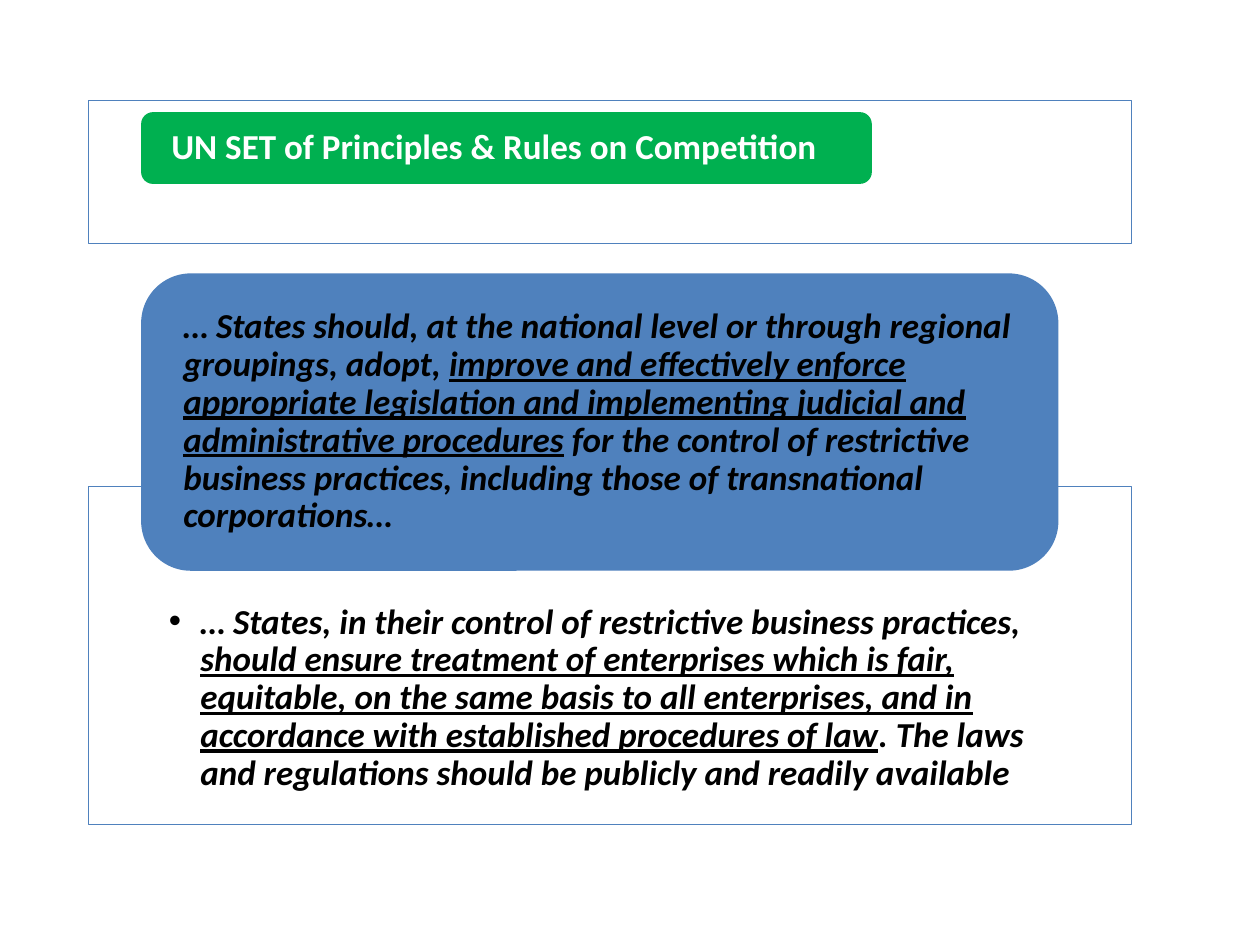
import pptx
import pptx.dml.color
import pptx.enum.shapes
import pptx.enum.text
import pptx.oxml.ns
import pptx.util
import lxml.etree

COLORS = {"white": "FFFFFF", "black": "000000", "green": "00B050", "blue": "4F81BD"}
WIDTH, HEIGHT = pptx.util.Inches(10), pptx.util.Inches(7.5)
FRAME_LEFT, FRAME_WIDTH = 7, 82.8
CARD_LEFT = 11.2
SHAPES = pptx.enum.shapes.MSO_SHAPE
ANCHORS = pptx.enum.text.MSO_ANCHOR

TITLE = [("UN SET of Principles & Rules on Competition", False)]
STATES_DUTY = [
    ("… States should, at the national level or through regional groupings, adopt, ", False),
    ("improve and effectively enforce appropriate legislation and implementing "
     "judicial and administrative procedures", True),
    (" for the control of restrictive business practices, including those of "
     "transnational corporations…", False),
]
FAIR_TREATMENT = [
    ("… States, in their control of restrictive business practices, ", False),
    ("should ensure treatment of enterprises which is fair, equitable, on the same basis "
     "to all enterprises, and in accordance with established procedures of law", True),
    (". The laws and regulations should be publicly and readily available", False),
]


def color(name):
    """Return the named palette colour."""
    return pptx.dml.color.RGBColor.from_string(COLORS[name])


def place(left, top, width, height):
    """Turn percentages of the slide's size into lengths."""
    return [round(share * size / 100) for share, size in
            zip((left, top, width, height), (WIDTH, HEIGHT, WIDTH, HEIGHT))]


def move(shape, box):
    """Put a shape at a box and bring it to the front."""
    shape.left, shape.top, shape.width, shape.height = box
    shape.element.getparent().append(shape.element)


def style_frame(shape):
    """Give a shape the translucent white fill and thin blue outline of a frame."""
    shape.fill.solid()
    shape.fill.fore_color.rgb = color("white")
    solid = shape.element.spPr.find(pptx.oxml.ns.qn("a:solidFill"))
    lxml.etree.SubElement(solid[0], pptx.oxml.ns.qn("a:alpha"), val="90000")
    shape.line.color.rgb = color("blue")
    shape.line.width = pptx.util.Pt(0.75)


def add_box(slide, kind, box):
    """Add a preset shape without a shadow."""
    shape = slide.shapes.add_shape(kind, *box)
    shape.shadow.inherit = False
    return shape


def add_card(slide, box, fill):
    """Add a filled rounded card without an outline."""
    card = add_box(slide, SHAPES.ROUNDED_RECTANGLE, box)
    card.fill.solid()
    card.fill.fore_color.rgb = color(fill)
    card.line.fill.background()
    return card


def set_bullet(paragraph):
    """Give a paragraph a round bullet with a quarter-inch hanging indent."""
    properties = paragraph._p.get_or_add_pPr()
    indent = pptx.util.Inches(0.25)
    properties.set("marL", str(indent))
    properties.set("indent", str(-indent))
    lxml.etree.SubElement(properties, pptx.oxml.ns.qn("a:buChar"), char="•")


def write(shape, runs, text_color, insets, anchor, italic=True, bullet=False):
    """Write one bold paragraph whose marked runs are underlined."""
    frame = shape.text_frame
    frame.word_wrap = True
    frame.auto_size = pptx.enum.text.MSO_AUTO_SIZE.NONE
    frame.vertical_anchor = anchor
    side, top, bottom = map(pptx.util.Inches, insets)
    frame.margin_left = frame.margin_right = side
    frame.margin_top, frame.margin_bottom = top, bottom
    paragraph = frame.paragraphs[0]
    paragraph.alignment = pptx.enum.text.PP_ALIGN.LEFT
    paragraph.line_spacing = 0.9
    paragraph.space_before = pptx.util.Pt(0)
    if bullet:
        set_bullet(paragraph)
    font = paragraph.font
    font.name, font.size = "Calibri", pptx.util.Pt(20)
    font.bold, font.italic = True, italic
    font.color.rgb = color(text_color)
    for text, underlined in runs:
        run = paragraph.add_run()
        run.text = text
        if underlined:
            run.font.underline = True


def main():
    """Build the slide and save it."""
    presentation = pptx.Presentation()
    presentation.slide_width, presentation.slide_height = WIDTH, HEIGHT
    slide = presentation.slides.add_slide(presentation.slide_layouts[1])
    title, body = slide.shapes.title, slide.placeholders[1]

    style_frame(add_box(slide, SHAPES.RECTANGLE, place(FRAME_LEFT, 10.67, FRAME_WIDTH, 15.07)))
    add_card(slide, place(CARD_LEFT, 11.87, 58, 7.6), "green")
    move(title, place(11.4, 12.27, 57.4, 6.8))
    write(title, TITLE, "white", (0.22, 0, 0), ANCHORS.MIDDLE, italic=False)

    move(body, place(FRAME_LEFT, 51.5, FRAME_WIDTH, 35.73))
    style_frame(body)
    write(body, FAIR_TREATMENT, "black", (0.64, 0.93, 0.16), ANCHORS.TOP, bullet=True)

    card = add_card(slide, place(CARD_LEFT, 28.93, 72.8, 31.47), "blue")
    write(card, STATES_DUTY, "black", (0.22, 0, 0), ANCHORS.MIDDLE)
    presentation.save("out.pptx")


if __name__ == "__main__":
    main()
